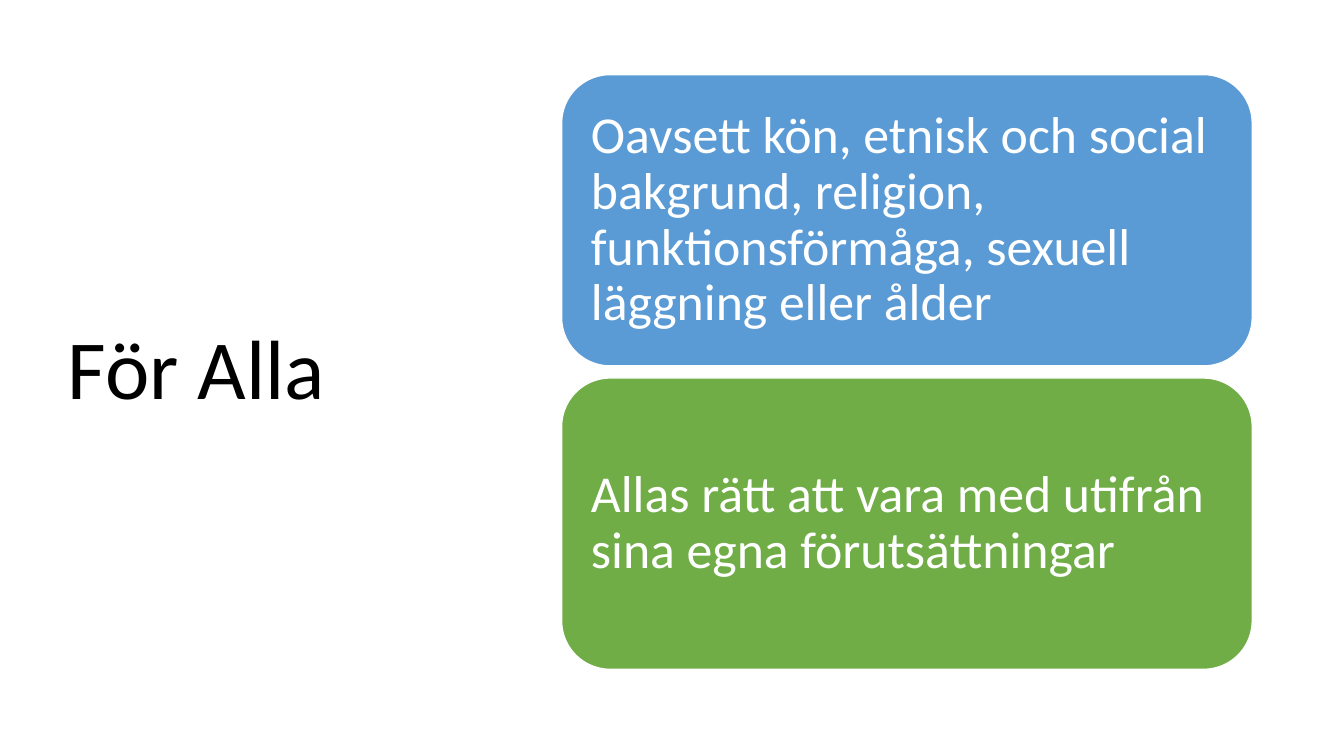
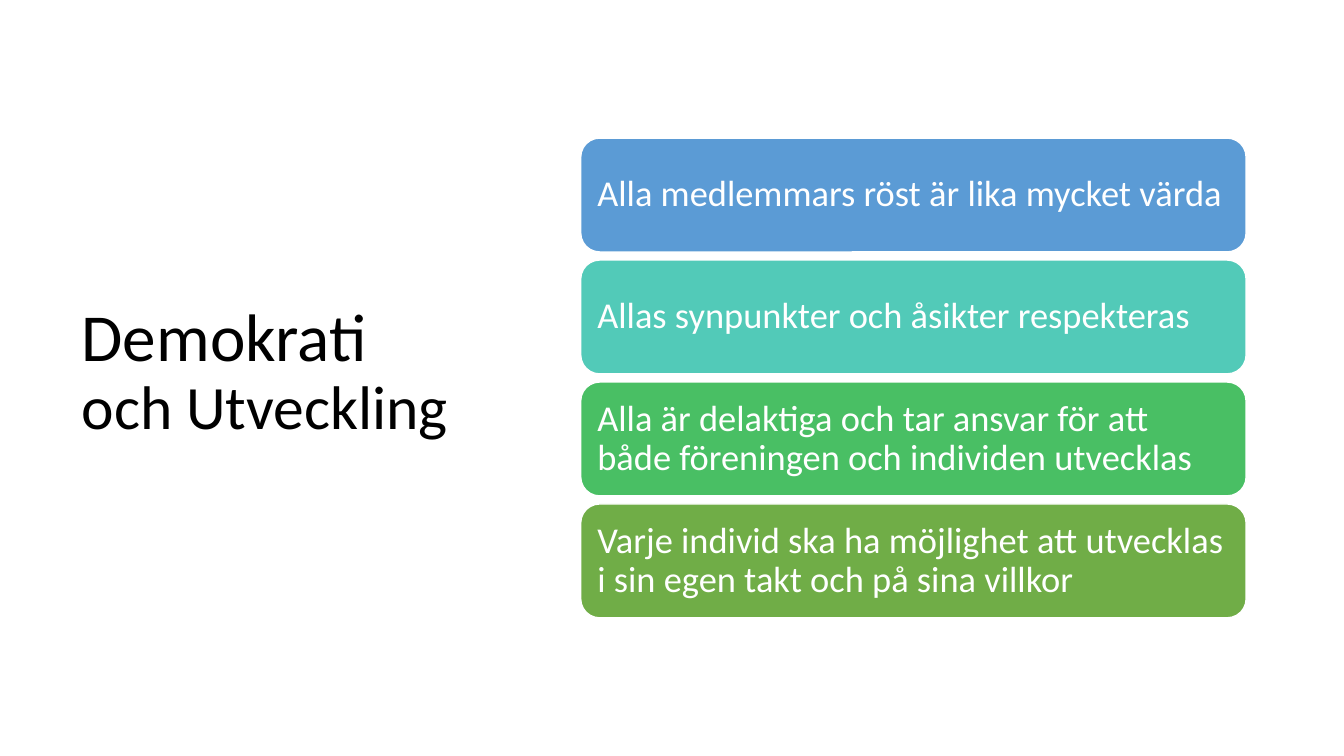
from pptx import Presentation
from pptx.dml.color import RGBColor
from pptx.enum.shapes import MSO_SHAPE
from pptx.enum.text import MSO_ANCHOR, MSO_AUTO_SIZE, PP_ALIGN
from pptx.util import Inches, Pt

ROUNDED = MSO_SHAPE.ROUNDED_RECTANGLE
MIDDLE = MSO_ANCHOR.MIDDLE
NO_FIT = MSO_AUTO_SIZE.NONE
LEFT = PP_ALIGN.LEFT

FONT = "Calibri"
BLACK, WHITE = "000000", "FFFFFF"
BLUE, TEAL, EMERALD, GREEN = "5B9BD5", "52CAB8", "49BF64", "70AD47"
TITLE_ONLY = 5


def rgb(value):
    return RGBColor.from_string(value)


def write(tf, runs, color, inset_x=0.1, inset_y=0.05):
    """Fill a frame with one left-aligned paragraph of (text, size) runs."""
    tf.word_wrap = True
    tf.auto_size = NO_FIT
    tf.vertical_anchor = MIDDLE
    tf.margin_left = tf.margin_right = Inches(inset_x)
    tf.margin_top = tf.margin_bottom = Inches(inset_y)
    p = tf.paragraphs[0]
    p.alignment = LEFT
    p.line_spacing = 0.9
    for text, size in runs:
        r = p.add_run()
        r.text = text
        r.font.name = FONT
        r.font.size = Pt(size)
        r.font.color.rgb = rgb(color)


def add_title(s, box, runs):
    title = s.shapes.title
    title.left, title.top, title.width, title.height = map(Inches, box)
    write(title.text_frame, runs, BLACK)


def add_cards(s, box, cards, gap, size, inset):
    """Stack equally tall cards, given as (text, fill), in the box."""
    left, top, width, height = box
    card_height = (height - gap * (len(cards) - 1)) / len(cards)
    for i, (text, fill) in enumerate(cards):
        y = top + i * (card_height + gap)
        sp = s.shapes.add_shape(ROUNDED, Inches(left), Inches(y),
                                Inches(width), Inches(card_height))
        sp.shadow.inherit = False
        sp.fill.solid()
        sp.fill.fore_color.rgb = rgb(fill)
        sp.line.color.rgb = rgb(WHITE)
        sp.line.width = Pt(1)
        write(sp.text_frame, [(text, size)], WHITE, inset, inset)


def add_value_slide(prs, title_box, title_runs, cards_box, cards, **card_style):
    """Title on the left, stacked cards on the right."""
    s = prs.slides.add_slide(prs.slide_layouts[TITLE_ONLY])
    add_title(s, title_box, title_runs)
    add_cards(s, cards_box, cards, **card_style)


def main():
    prs = Presentation()
    prs.slide_width, prs.slide_height = Inches(13.33), Inches(7.5)

    # For everyone
    add_value_slide(
        prs, (0.57, 0.68, 4.53, 6.02), [("För Alla", 60)],
        (5.57, 0.74, 6.85, 5.9),
        [("Oavsett kön, etnisk och social bakgrund, religion, "
          "funktionsförmåga, sexuell läggning eller ålder", BLUE),
         ("Allas rätt att vara med utifrån sina egna förutsättningar", GREEN)],
        gap=0.12, size=37, inset=0.15)

    # Democracy and development
    add_value_slide(
        prs, (0.71, 0.69, 4.01, 6.02),
        [("Demokrati", 48), (" och Utveckling", 44)],
        (5.76, 1.37, 6.6, 4.76),
        [("Alla medlemmars röst är lika mycket värda", BLUE),
         ("Allas synpunkter och åsikter respekteras", TEAL),
         ("Alla är delaktiga och tar ansvar för att både föreningen "
          "och individen utvecklas", EMERALD),
         ("Varje individ ska ha möjlighet att utvecklas i sin egen takt "
          "och på sina villkor", GREEN)],
        gap=0.08, size=26, inset=0.11)

    prs.save("out.pptx")


if __name__ == "__main__":
    main()
